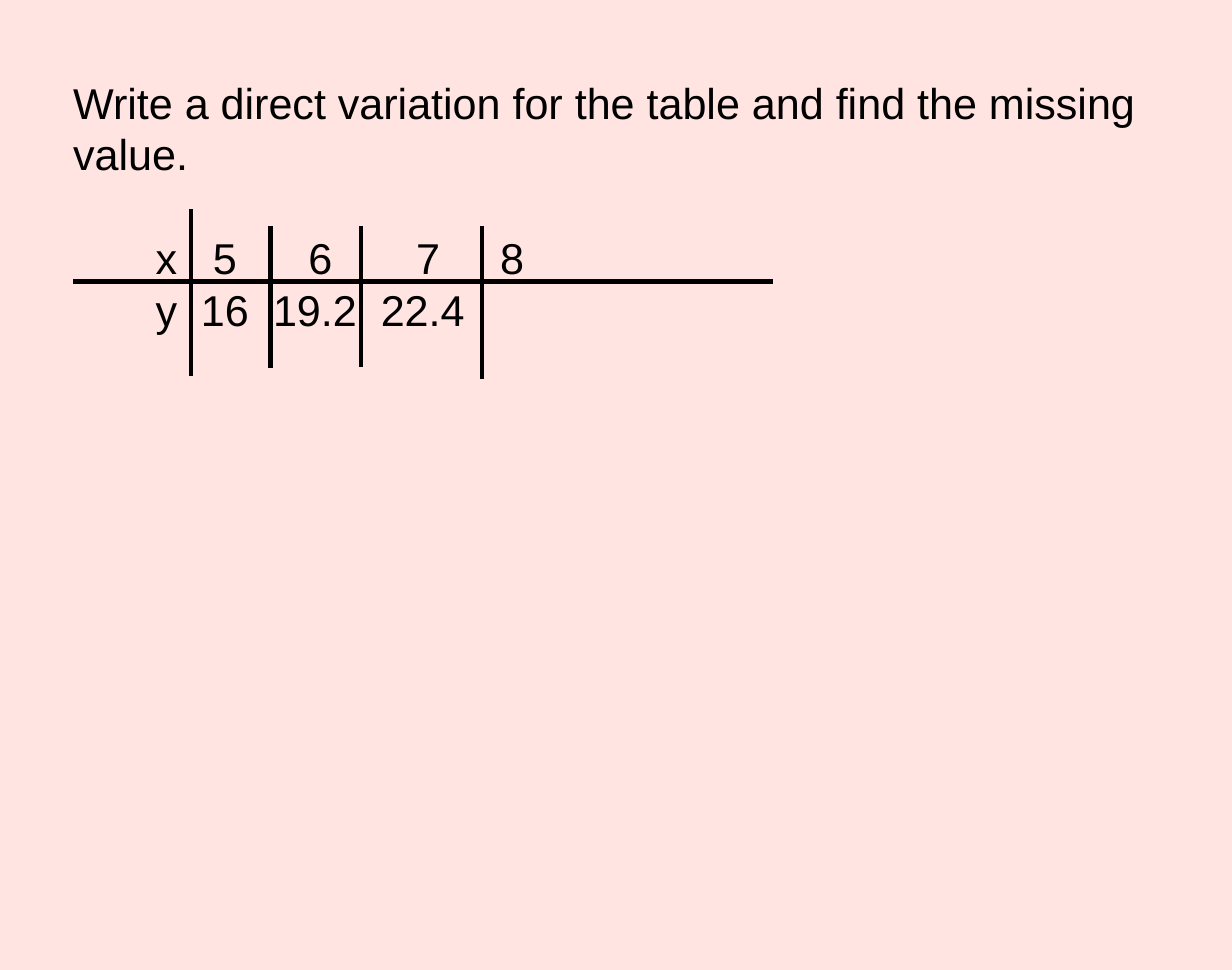
from lxml import etree
from pptx import Presentation
from pptx.dml.color import RGBColor
from pptx.enum.shapes import MSO_CONNECTOR
from pptx.enum.text import MSO_ANCHOR, MSO_AUTO_SIZE, PP_ALIGN
from pptx.oxml.ns import qn
from pptx.util import Pt

STRAIGHT = MSO_CONNECTOR.STRAIGHT
TOP = MSO_ANCHOR.TOP
NO_AUTOFIT = MSO_AUTO_SIZE.NONE
LEFT = PP_ALIGN.LEFT

INK = RGBColor(0x00, 0x00, 0x00)
ROSE = RGBColor(0xFF, 0xE4, 0xE1)

MARGIN = 47.5
TITLE_ONLY = 5
QUESTION = "Write a direct variation for the table and find the missing value."
ROWS = [
    [("x", 108), ("5", 146), ("6", 208), ("7", 278), ("8", 332.5)],
    [("y", 108), ("16", 146), ("19.2", 204.5), ("22.4", 274.5)],
]
COLUMN_RULES = [(124, 136, 244), (175.5, 147, 239), (234.5, 147, 238.5), (313, 147, 246)]
ROW_RULE = (47.5, 183, 502, 183)


def write(para, text, font="Arial", size=28, color=INK, spacing=33.6):
    para.alignment = LEFT
    para.line_spacing = Pt(spacing)
    para.space_before = Pt(0)
    span = para.add_run()
    span.text = text
    span.font.name = font
    span.font.size = Pt(size)
    span.font.color.rgb = color


def add_centered_tabs(para, centers):
    tabs = etree.SubElement(para._p.get_or_add_pPr(), qn("a:tabLst"))
    for center in centers:
        etree.SubElement(tabs, qn("a:tab"), pos=str(int(Pt(center - MARGIN))), algn="ctr")


class WorksheetPage:
    def __init__(self, deck, background=ROSE, ink=INK, rule_width=3):
        self.page = deck.slides.add_slide(deck.slide_layouts[TITLE_ONLY])
        self.page.background.fill.solid()
        self.page.background.fill.fore_color.rgb = background
        self.ink = ink
        self.rule_width = rule_width

    def prepare(self, box, left, top, width, height):
        box.left, box.top, box.width, box.height = Pt(left), Pt(top), Pt(width), Pt(height)
        frame = box.text_frame
        frame.margin_left = frame.margin_right = frame.margin_top = frame.margin_bottom = 0
        frame.word_wrap = True
        frame.auto_size = NO_AUTOFIT
        frame.vertical_anchor = TOP
        return frame

    def title(self, text, left, top, width, height):
        frame = self.prepare(self.page.shapes.title, left, top, width, height)
        write(frame.paragraphs[0], text, color=self.ink)

    def value_rows(self, rows, left, top, width, height):
        box = self.page.shapes.add_textbox(0, 0, 0, 0)
        frame = self.prepare(box, left, top, width, height)
        for index, row in enumerate(rows):
            para = frame.add_paragraph() if index else frame.paragraphs[0]
            write(para, "".join("\t" + value for value, center in row), color=self.ink)
            add_centered_tabs(para, [center for value, center in row])

    def rule(self, x1, y1, x2, y2):
        line = self.page.shapes.add_connector(STRAIGHT, Pt(x1), Pt(y1), Pt(x2), Pt(y2))
        line.line.color.rgb = self.ink
        line.line.width = Pt(self.rule_width)
        etree.SubElement(line._element.spPr, qn("a:effectLst"))


def main():
    deck = Presentation()
    deck.slide_width, deck.slide_height = Pt(800), Pt(630)
    worksheet = WorksheetPage(deck)
    worksheet.title(QUESTION, MARGIN, 49.5, 734, 68)
    worksheet.value_rows(ROWS, MARGIN, 150.5, 734, 68)
    worksheet.rule(*ROW_RULE)
    for x, top, bottom in COLUMN_RULES:
        worksheet.rule(x, top, x, bottom)
    deck.save("out.pptx")


if __name__ == "__main__":
    main()
